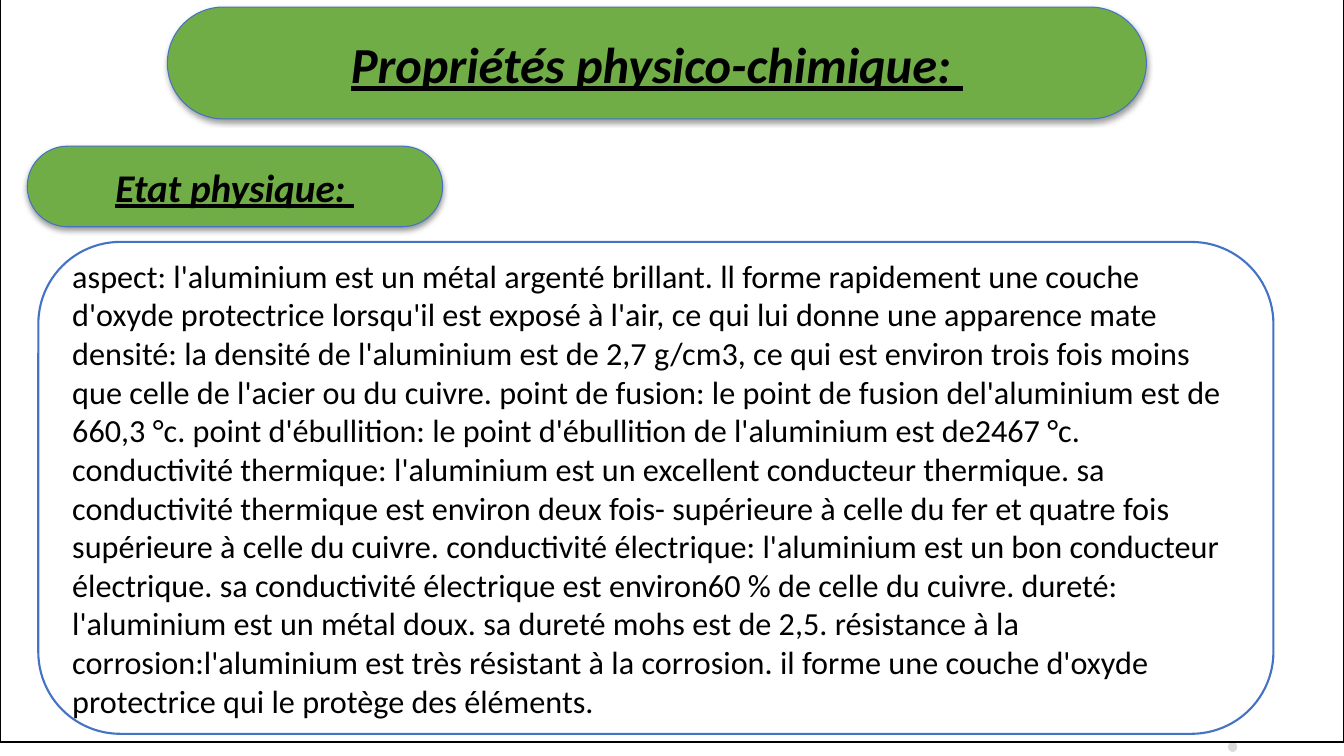
from lxml.etree import SubElement
from pptx import Presentation
from pptx.dml.color import RGBColor
from pptx.enum.shapes import MSO_SHAPE
from pptx.enum.text import MSO_ANCHOR, PP_ALIGN
from pptx.oxml.ns import qn
from pptx.util import Inches, Pt

BLACK, WHITE, GREEN, BLUE, GREY = "000000", "FFFFFF", "70AD47", "4472C4", "DBD8D8"
PROPERTIES = [
    "aspect: l'aluminium est un métal argenté brillant. ll forme rapidement une couche "
    "d'oxyde protectrice lorsqu'il est exposé à l'air, ce qui lui donne une apparence mate",
    "densité: la densité de l'aluminium est de 2,7 g/cm3, ce qui est environ trois fois moins "
    "que celle de l'acier ou du cuivre.",
    "point de fusion: le point de fusion del'aluminium est de 660,3 °c.",
    "point d'ébullition: le point d'ébullition de l'aluminium est de2467 °c.",
    "conductivité thermique: l'aluminium est un excellent conducteur thermique. sa "
    "conductivité thermique est environ deux fois- supérieure à celle du fer et quatre fois "
    "supérieure à celle du cuivre.",
    "conductivité électrique: l'aluminium est un bon conducteur électrique. sa "
    "conductivité électrique est environ60 % de celle du cuivre.",
    "dureté: l'aluminium est un métal doux. sa dureté mohs est de 2,5.",
    "résistance à la corrosion:l'aluminium est très résistant à la corrosion. il forme "
    "une couche d'oxyde protectrice qui le protège des éléments.",
]


def color(value):
    return RGBColor.from_string(value)


def add_panel(slide, kind, box, fill, line=None, width=0.75):
    shape = slide.shapes.add_shape(kind, *map(Inches, box))
    shape.shadow.inherit = False
    shape.fill.solid()
    shape.fill.fore_color.rgb = color(fill)
    if line:
        shape.line.color.rgb = color(line)
        shape.line.width = Pt(width)
    else:
        shape.line.fill.background()
    return shape


def add_shadow(shape):
    effects = shape.element.spPr.find(qn("a:effectLst"))
    shadow = SubElement(effects, qn("a:outerShdw"), blurRad=str(Pt(4.1)),
                        dist=str(Pt(2)), dir="5400000", algn="ctr", rotWithShape="0")
    tint = SubElement(shadow, qn("a:srgbClr"), val=BLACK)
    SubElement(tint, qn("a:alpha"), val="40000")


def write_text(shape, text, size, alignment):
    frame = shape.text_frame
    frame.word_wrap = True
    frame.vertical_anchor = MSO_ANCHOR.MIDDLE
    paragraph = frame.paragraphs[0]
    paragraph.text = text
    paragraph.alignment = alignment
    font = paragraph.font
    font.name, font.size = "Calibri", Pt(size)
    font.color.rgb = color(BLACK)
    return font


def add_heading(slide, box, text, size):
    shape = add_panel(slide, MSO_SHAPE.ROUNDED_RECTANGLE, box, GREEN, BLUE)
    shape.adjustments[0] = 0.5
    add_shadow(shape)
    font = write_text(shape, text, size, PP_ALIGN.CENTER)
    font.bold = font.italic = font.underline = True


def add_body(slide, box):
    shape = add_panel(slide, MSO_SHAPE.ROUNDED_RECTANGLE, box, WHITE, BLUE, 1.5)
    write_text(shape, " ".join(PROPERTIES), 23, PP_ALIGN.LEFT)


def add_background(slide, box):
    left, top, width, height = box
    dot = (left + width - 1.15, top + height, 0.09, 0.1)
    add_panel(slide, MSO_SHAPE.OVAL, dot, GREY)
    add_panel(slide, MSO_SHAPE.RECTANGLE, box, WHITE, BLACK, 1.5)


def main():
    presentation = Presentation()
    presentation.slide_width = Inches(13.33)
    presentation.slide_height = Inches(7.5)
    slide = presentation.slides.add_slide(presentation.slide_layouts[6])
    add_background(slide, (0, -0.14, 13.33, 7.5))
    add_heading(slide, (1.66, 0.07, 9.71, 1.11), "Propriétés physico-chimique: ", 36)
    add_heading(slide, (0.27, 1.45, 4.12, 0.8), "Etat physique: ", 28)
    add_body(slide, (0.38, 2.4, 12.25, 4.88))
    presentation.save("out.pptx")


if __name__ == "__main__":
    main()
